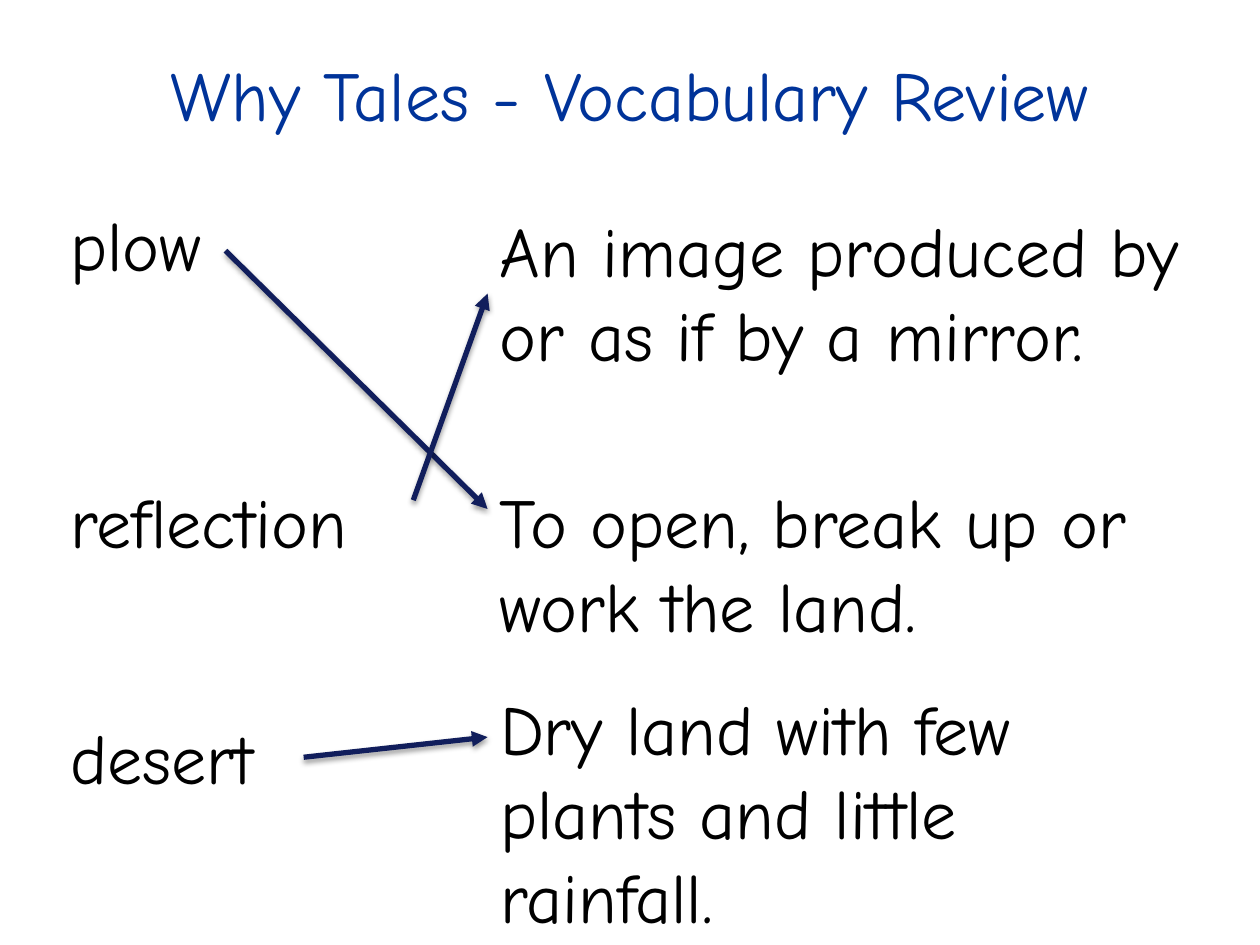
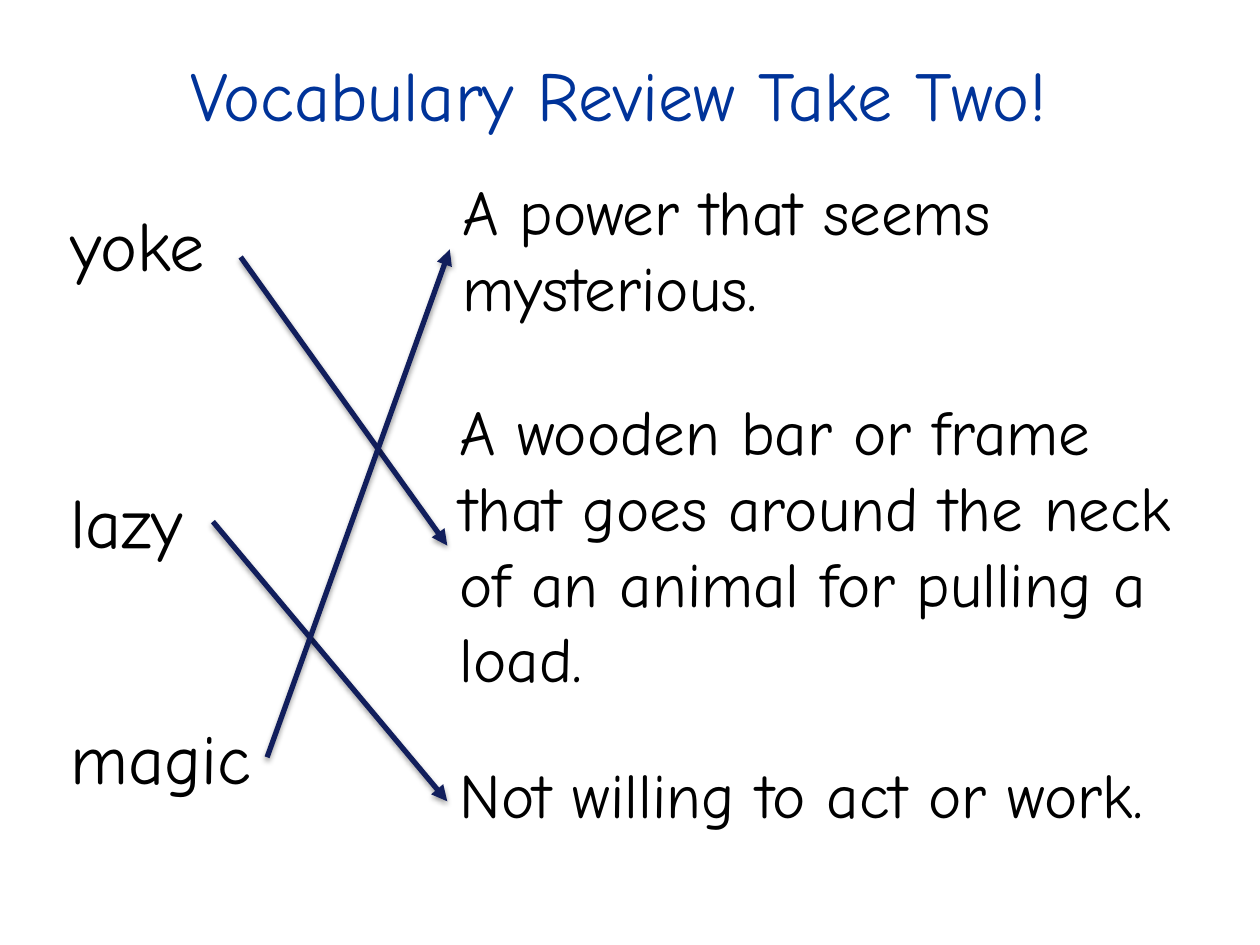
from lxml import etree
from pptx import Presentation
from pptx.dml.color import RGBColor
from pptx.enum.shapes import MSO_CONNECTOR
from pptx.enum.text import MSO_ANCHOR, MSO_AUTO_SIZE, PP_ALIGN
from pptx.oxml import parse_xml
from pptx.oxml.ns import nsdecls, qn
from pptx.util import Inches, Pt

STRAIGHT = MSO_CONNECTOR.STRAIGHT
TOP, MIDDLE = MSO_ANCHOR.TOP, MSO_ANCHOR.MIDDLE
FIT_TEXT = MSO_AUTO_SIZE.SHAPE_TO_FIT_TEXT
LEFT, CENTER = PP_ALIGN.LEFT, PP_ALIGN.CENTER

TITLE_BLUE = RGBColor(0x00, 0x33, 0x99)
ARROW_NAVY = RGBColor(0x11, 0x1E, 0x5C)
BLACK = RGBColor(0x00, 0x00, 0x00)

FONT = "Comic Neue"
WORD_SIZE = 40
LINE_SPACING = 1.2
WORD_LEFT = 0.46
WORD_TOPS = (1.55, 3.75, 5.62)
TITLE_ONLY_LAYOUT = 5

SHADOW_XML = (
    f'<a:effectLst {nsdecls("a")}>'
    '<a:outerShdw blurRad="40000" dist="20000" dir="5400000" rotWithShape="0">'
    '<a:srgbClr val="000000"><a:alpha val="38000"/></a:srgbClr>'
    "</a:outerShdw></a:effectLst>"
)

REVIEWS = [
    {
        "title": ("Why Tales - Vocabulary Review", 0.82, 8.36),
        "words": [("plow", 1.33), ("reflection", 2.82), ("desert", 1.95)],
        "definition_size": 40,
        "definitions": [
            (3.87, 1.6, 5.93, ["An image produced by", "or as if by a mirror."]),
            (3.87, 3.75, 5.56, ["To open, break up or", "work the land."]),
            (3.87, 5.39, 5.02, ["Dry land with few", "plants and little", "rainfall."]),
        ],
        "arrows": [
            ((1.79, 1.99), (3.87, 4.04)),
            ((3.28, 3.97), (3.87, 2.33)),
            ((2.41, 6.01), (3.87, 5.85)),
        ],
    },
    {
        "title": ("Vocabulary Review Take Two!", 1, 7.82),
        "words": [("yoke", 1.4), ("lazy", 1.24), ("magic", 1.67)],
        "definition_size": 36,
        "definitions": [
            (3.57, 1.32, 4.89, ["A power that seems", "mysterious."]),
            (3.55, 3.07, 6.36, [
                "A wooden bar or frame",
                "that goes around the neck",
                "of an animal for pulling a",
                "load.",
            ]),
            (3.55, 5.95, 6.32, ["Not willing to act or work."]),
        ],
        "arrows": [
            ((1.91, 2.04), (3.55, 4.33)),
            ((1.69, 4.14), (3.55, 6.36)),
            ((2.12, 6.01), (3.57, 1.98)),
        ],
    },
]


def text_height(line_count, size):
    return 0.1 + line_count * size * LINE_SPACING / 72


def write_lines(shape, lines, size, color, alignment, anchor):
    frame = shape.text_frame
    frame.word_wrap = False
    frame.auto_size = FIT_TEXT
    frame.vertical_anchor = anchor
    for index, line in enumerate(lines):
        paragraph = frame.add_paragraph() if index else frame.paragraphs[0]
        paragraph.alignment = alignment
        run = paragraph.add_run()
        run.text = line
        run.font.name = FONT
        run.font.size = Pt(size)
        run.font.color.rgb = color


def set_title(slide, text, left, width):
    title = slide.shapes.title
    title.left, title.top = Inches(left), Inches(0.36)
    title.width, title.height = Inches(width), Inches(text_height(1, WORD_SIZE))
    write_lines(title, [text], WORD_SIZE, TITLE_BLUE, CENTER, MIDDLE)


def add_text(slide, left, top, width, lines, size):
    height = text_height(len(lines), size)
    box = slide.shapes.add_textbox(
        Inches(left), Inches(top), Inches(width), Inches(height)
    )
    write_lines(box, lines, size, BLACK, LEFT, TOP)


def add_arrow(slide, start, end):
    points = [Inches(value) for value in (*start, *end)]
    connector = slide.shapes.add_connector(STRAIGHT, *points)
    connector.line.color.rgb = ARROW_NAVY
    connector.line.width = Pt(3)
    properties = connector._element.spPr
    outline = properties.find(qn("a:ln"))
    etree.SubElement(outline, qn("a:tailEnd"), type="triangle")
    properties.append(parse_xml(SHADOW_XML))


def add_review_slide(presentation, review):
    layout = presentation.slide_layouts[TITLE_ONLY_LAYOUT]
    slide = presentation.slides.add_slide(layout)
    set_title(slide, *review["title"])
    for top, (word, width) in zip(WORD_TOPS, review["words"]):
        add_text(slide, WORD_LEFT, top, width, [word], WORD_SIZE)
    for left, top, width, lines in review["definitions"]:
        add_text(slide, left, top, width, lines, review["definition_size"])
    for start, end in review["arrows"]:
        add_arrow(slide, start, end)


def main():
    presentation = Presentation()
    presentation.slide_width = Inches(10)
    presentation.slide_height = Inches(7.5)
    for review in REVIEWS:
        add_review_slide(presentation, review)
    presentation.save("out.pptx")


if __name__ == "__main__":
    main()
